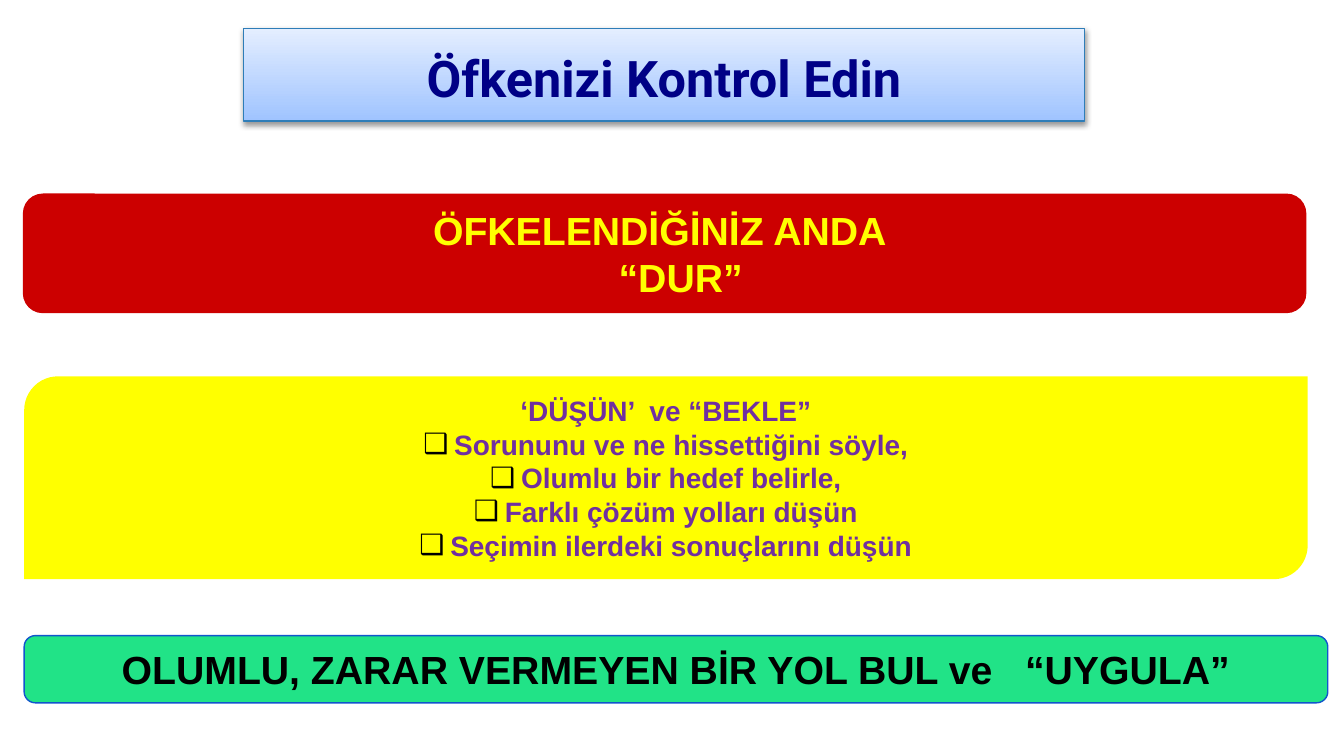
"""Build the anger control slide: a title banner above three coloured steps."""
from dataclasses import dataclass
from typing import Optional

import lxml.etree
import pptx
import pptx.dml.color
import pptx.enum.shapes
import pptx.enum.text
import pptx.oxml
import pptx.oxml.ns
import pptx.util

Inches = pptx.util.Inches
Color = pptx.dml.color.RGBColor
Kind = pptx.enum.shapes.MSO_SHAPE
Anchor = pptx.enum.text.MSO_ANCHOR

NAVY = Color(0x00, 0x00, 0x86)
SKY_LIGHT = Color(0xE4, 0xEE, 0xFF)
SKY_DARK = Color(0xA0, 0xC4, 0xFF)
STEEL = Color(0x2E, 0x7D, 0xB8)
RED = Color(0xCC, 0x00, 0x00)
YELLOW = Color(0xFF, 0xFF, 0x00)
PURPLE = Color(0x70, 0x30, 0xA0)
GREEN = Color(0x21, 0xE3, 0x87)
BLUE = Color(0x11, 0x55, 0xCC)
BLACK = Color(0x00, 0x00, 0x00)

NAMESPACE = pptx.oxml.ns.nsdecls("a")
SHADOW = (
    f'<a:effectLst {NAMESPACE}><a:outerShdw blurRad="40000" dist="23000" dir="5400000" '
    'rotWithShape="0"><a:srgbClr val="000000"><a:alpha val="40000"/></a:srgbClr>'
    "</a:outerShdw></a:effectLst>"
)


@dataclass(frozen=True)
class Line:
    text: str
    bullet: bool = False
    indent: float = 0


@dataclass(frozen=True)
class Banner:
    kind: Kind
    left: float
    top: float
    width: float
    height: float
    fill: Color
    text_color: Color
    size: float
    lines: tuple[Line, ...]
    outline: Optional[Color] = None
    font: str = "Arial"
    anchor: Anchor = Anchor.MIDDLE
    fill_end: Optional[Color] = None


BANNERS = (
    Banner(Kind.RECTANGLE, 1.81, 0.21, 6.26, 0.69, SKY_LIGHT, NAVY, 27,
           (Line("Öfkenizi Kontrol Edin"),), STEEL, "Roboto", Anchor.BOTTOM, SKY_DARK),
    Banner(Kind.FLOWCHART_ALTERNATE_PROCESS, 0.17, 1.44, 9.55, 0.89, RED, YELLOW, 21,
           (Line("ÖFKELENDİĞİNİZ ANDA "), Line("“DUR”", indent=0.24))),
    Banner(Kind.ROUND_2_DIAG_RECTANGLE, 0.18, 2.8, 9.55, 1.51, YELLOW, PURPLE, 15,
           (Line("‘DÜŞÜN’  ve “BEKLE”"),
            Line("Sorununu ve ne hissettiğini söyle,", True),
            Line("Olumlu bir hedef belirle,", True),
            Line("Farklı çözüm yolları düşün", True),
            Line("Seçimin ilerdeki sonuçlarını düşün", True))),
    Banner(Kind.ROUNDED_RECTANGLE, 0.18, 4.73, 9.7, 0.5, GREEN, BLACK, 21,
           (Line("OLUMLU, ZARAR VERMEYEN BİR YOL BUL ve   “UYGULA”"),), BLUE),
)


def add_bullet(properties: lxml.etree._Element) -> None:
    properties.set("marL", str(Inches(0.23)))
    properties.set("indent", str(-Inches(0.23)))
    for markup in (
        f'<a:buClr {NAMESPACE}><a:srgbClr val="{BLACK}"/></a:buClr>',
        f'<a:buFont {NAMESPACE} typeface="Arial"/>',
        f'<a:buChar {NAMESPACE} char="❑"/>',
    ):
        properties.append(pptx.oxml.parse_xml(markup))


def paint(shape: pptx.shapes.autoshape.Shape, banner: Banner) -> None:
    shape.shadow.inherit = False
    if banner.fill_end is None:
        shape.fill.solid()
        shape.fill.fore_color.rgb = banner.fill
    else:
        shape.fill.gradient()
        shape.fill.gradient_angle = 270
        for stop, color in zip(shape.fill.gradient_stops, (banner.fill, banner.fill_end)):
            stop.color.rgb = color
        properties = shape.element.spPr
        properties.replace(properties.find(pptx.oxml.ns.qn("a:effectLst")),
                           pptx.oxml.parse_xml(SHADOW))
    if banner.outline is None:
        shape.line.fill.background()
    else:
        shape.line.color.rgb = banner.outline
        shape.line.width = pptx.util.Pt(0.75)


def add_banner(page: pptx.slide.Slide, banner: Banner) -> None:
    shape = page.shapes.add_shape(
        banner.kind, Inches(banner.left), Inches(banner.top),
        Inches(banner.width), Inches(banner.height))
    paint(shape, banner)
    frame = shape.text_frame
    frame.word_wrap = True
    frame.vertical_anchor = banner.anchor
    if banner.anchor == Anchor.BOTTOM:
        frame.margin_top = frame.margin_bottom = Inches(0.1)
    for index, line in enumerate(banner.lines):
        para = frame.add_paragraph() if index else frame.paragraphs[0]
        para.alignment = pptx.enum.text.PP_ALIGN.CENTER
        properties = para._p.get_or_add_pPr()
        if line.bullet:
            add_bullet(properties)
        elif line.indent:
            properties.set("marL", str(Inches(line.indent)))
        span = para.add_run()
        span.text = line.text
        span.font.name = banner.font
        span.font.size = pptx.util.Pt(banner.size)
        span.font.bold = True
        span.font.color.rgb = banner.text_color


def main() -> None:
    deck = pptx.Presentation()
    deck.slide_width = Inches(10)
    deck.slide_height = deck.slide_width * 9 // 16
    page = deck.slides.add_slide(deck.slide_layouts[6])
    for banner in BANNERS:
        add_banner(page, banner)
    deck.save("out.pptx")


if __name__ == "__main__":
    main()
